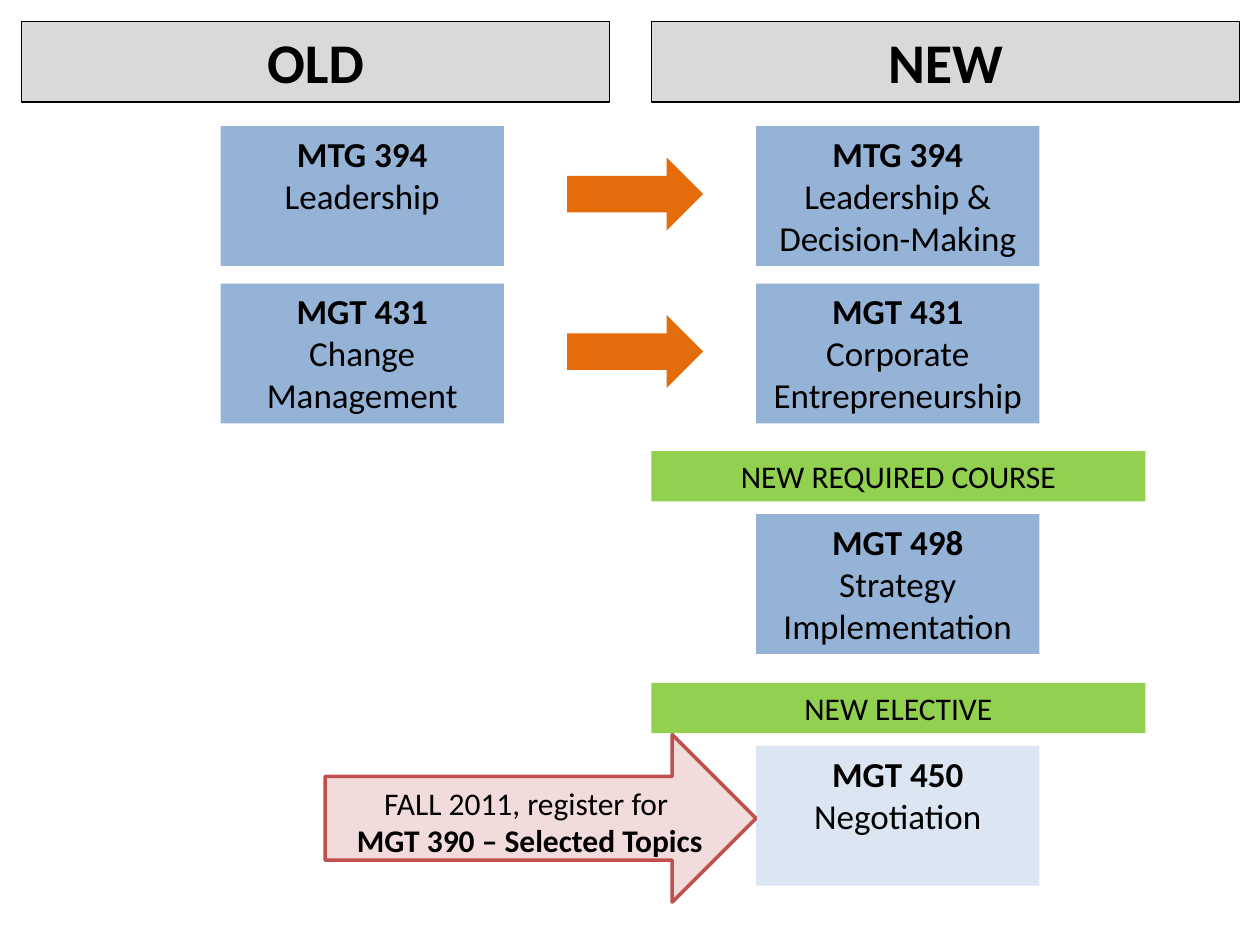
from dataclasses import dataclass

import pptx
import pptx.dml.color
import pptx.enum.shapes
import pptx.enum.text
import pptx.util
from pptx.util import Inches

RECT = pptx.enum.shapes.MSO_SHAPE.RECTANGLE
ARROW = pptx.enum.shapes.MSO_SHAPE.RIGHT_ARROW
OLD_X, NEW_X = 1.75, 6
ROW_1, ROW_2 = 1, 2.25
BLUE, PALE_BLUE = "95B3D7", "DCE6F2"


@dataclass
class Course:
    x: float
    y: float
    code: str
    title: list[str]
    fill: str = BLUE


@dataclass
class Bar:
    """A heading or section band."""
    x: float
    y: float
    w: float
    h: float
    text: str
    fill: str
    size: int
    bold: bool = False
    line: str | None = None


COURSES = [
    Course(OLD_X, ROW_1, "MTG 394", ["Leadership"]),
    Course(OLD_X, ROW_2, "MGT 431", ["Change Management"]),
    Course(NEW_X, ROW_1, "MTG 394", ["Leadership &", "Decision-Making"]),
    Course(NEW_X, ROW_2, "MGT 431", ["Corporate Entrepreneurship"]),
    Course(NEW_X, 4.08, "MGT 498", ["Strategy Implementation"]),
    Course(NEW_X, 5.92, "MGT 450", ["Negotiation"], PALE_BLUE),
]
BARS = [
    Bar(0.17, 0.17, 4.67, 0.64, "OLD", "D9D9D9", 32, True, "000000"),
    Bar(5.17, 0.17, 4.67, 0.64, "NEW", "D9D9D9", 32, True, "000000"),
    Bar(5.17, 3.58, 3.92, 0.4, "NEW REQUIRED COURSE", "92D050", 18),
    Bar(5.17, 5.42, 3.92, 0.4, "NEW ELECTIVE", "92D050", 18),
]


def rgb(color: str) -> pptx.dml.color.RGBColor:
    return pptx.dml.color.RGBColor.from_string(color)


def add_block(s, kind, x: float, y: float, w: float, h: float, fill: str,
              line: str | None = None, line_width: float = 0.75):
    sp = s.shapes.add_shape(kind, Inches(x), Inches(y), Inches(w), Inches(h))
    sp.shadow.inherit = False
    sp.fill.solid()
    sp.fill.fore_color.rgb = rgb(fill)
    if line:
        sp.line.color.rgb = rgb(line)
        sp.line.width = pptx.util.Pt(line_width)
    else:
        sp.line.fill.background()
    return sp


def write(sp, lines: list[str], *, size: int, bold_line: int | None = None) -> None:
    """Write centred lines from the top, with one of them in bold."""
    tf = sp.text_frame
    tf.word_wrap = True
    tf.vertical_anchor = pptx.enum.text.MSO_ANCHOR.TOP
    for i, text in enumerate(lines):
        p = tf.paragraphs[0] if i == 0 else tf.add_paragraph()
        p.alignment = pptx.enum.text.PP_ALIGN.CENTER
        r = p.add_run()
        r.text = text
        r.font.name = "Calibri"
        r.font.size = pptx.util.Pt(size)
        r.font.bold = i == bold_line
        r.font.color.rgb = rgb("000000")


def add_course(s, course: Course) -> None:
    sp = add_block(s, RECT, course.x, course.y, 2.25, 1.11, course.fill)
    write(sp, [course.code, *course.title], size=20, bold_line=0)


def add_bar(s, bar: Bar) -> None:
    sp = add_block(s, RECT, bar.x, bar.y, bar.w, bar.h, bar.fill, bar.line)
    write(sp, [bar.text], size=bar.size, bold_line=0 if bar.bold else None)


def add_registration_note(s) -> None:
    add_block(s, ARROW, 2.58, 5.83, 3.42, 1.33, "F2DCDB", "C0504D", 2)
    tb = s.shapes.add_textbox(Inches(2.58), Inches(6.17), Inches(3.25), Inches(0.71))
    write(tb, ["FALL 2011, register for ", "MGT 390 – Selected Topics"],
          size=18, bold_line=1)


def main() -> None:
    prs = pptx.Presentation()
    prs.slide_width, prs.slide_height = Inches(10), Inches(7.5)
    s = prs.slides.add_slide(prs.slide_layouts[6])
    for course in COURSES:
        add_course(s, course)
    for bar in BARS:
        add_bar(s, bar)
    for row in (ROW_1, ROW_2):
        add_block(s, ARROW, 4.5, row + 0.25, 1.08, 0.58, "E46C0A")
    add_registration_note(s)
    prs.save("out.pptx")


if __name__ == "__main__":
    main()
